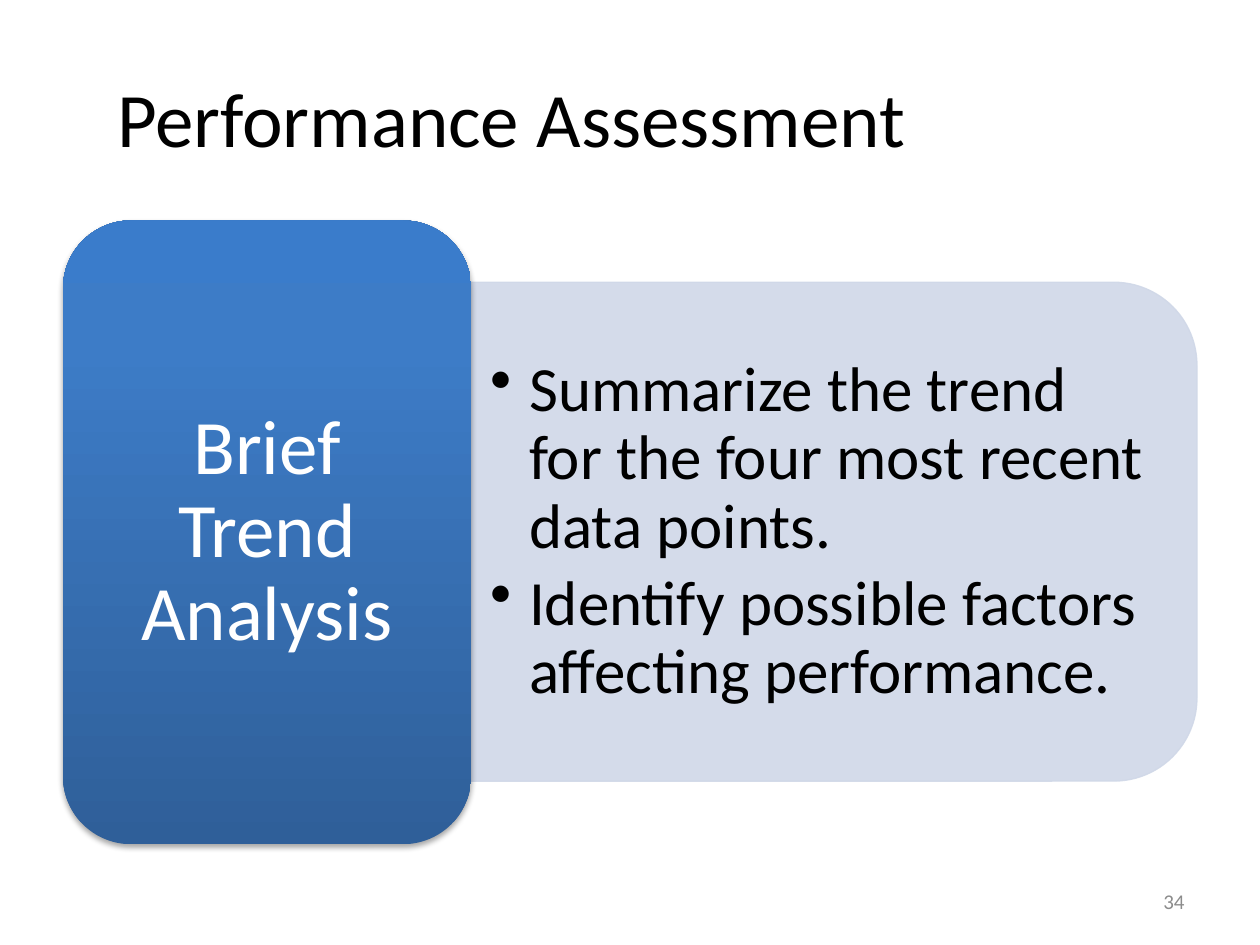
from dataclasses import dataclass

from pptx import Presentation
from pptx.dml.color import RGBColor
from pptx.enum.shapes import MSO_SHAPE
from pptx.enum.text import MSO_ANCHOR, PP_ALIGN
from pptx.oxml import parse_xml
from pptx.oxml.ns import nsdecls, qn
from pptx.util import Pt

PX = 9144  # 100 px to the inch
FONT = "Calibri"
LEFT, CENTER, RIGHT = PP_ALIGN.LEFT, PP_ALIGN.CENTER, PP_ALIGN.RIGHT
MIDDLE = MSO_ANCHOR.MIDDLE
COLORS = {
    "black": "000000",
    "white": "FFFFFF",
    "gray": "8C8C8C",
    "panel": "D0D8E8",
    "blue_dark": "2F5F99",
    "blue_mid": "3D7CC7",
    "blue_light": "3A7CCB",
}
GRADIENT = ((0, "blue_dark"), (80, "blue_mid"), (100, "blue_light"))


@dataclass
class Label:
    box: tuple[int, int, int, int]
    paragraphs: list[str]
    size: int
    color: str
    align: PP_ALIGN
    inset: tuple[int, int] = (10, 5)
    line_spacing: float = 1.0
    bullets: bool = False


LABELS = [
    Label((374, 244, 557, 357),
          ["Summarize the trend for the four most recent data points.",
           "Identify possible factors affecting performance."],
          36, "black", LEFT, (15, 7), 0.9, True),
    Label((66, 191, 292, 463), ["Brief Trend Analysis"],
          44, "white", CENTER, (18, 9), 0.9),
    Label((717, 695, 233, 40), ["34"], 12, "gray", RIGHT),
]


def emu(box: tuple[int, ...]) -> list[int]:
    return [v * PX for v in box]


def add_bullet(p) -> None:
    pPr = p._p.get_or_add_pPr()
    pPr.set("marL", str(31 * PX))
    pPr.set("indent", str(-31 * PX))
    pPr.append(parse_xml(f'<a:buChar {nsdecls("a")} char="•"/>'))


def fill_text(shape, label: Label) -> None:
    tf = shape.text_frame
    tf.word_wrap = True
    tf.vertical_anchor = MIDDLE
    tf.margin_left = tf.margin_right = label.inset[0] * PX
    tf.margin_top = tf.margin_bottom = label.inset[1] * PX
    tf.text = "\n".join(label.paragraphs)
    for p in tf.paragraphs:
        if label.bullets:
            add_bullet(p)
            p.space_after = Pt(5.4)
        p.alignment = label.align
        p.line_spacing = label.line_spacing
        for r in p.runs:
            r.font.name = FONT
            r.font.size = Pt(label.size)
            r.font.color.rgb = RGBColor.from_string(COLORS[label.color])


def add_panel(shapes) -> None:
    s = shapes.add_shape(MSO_SHAPE.ROUND_2_SAME_RECTANGLE,
                         *emu((464, 134, 396, 576)))
    s.rotation = 90
    s.shadow.inherit = False
    s.line.width = Pt(0.75)
    for fill in (s.fill, s.line.fill):
        fill.solid()
        fill.fore_color.rgb = RGBColor.from_string(COLORS["panel"])
    for color in s._element.spPr.iter(qn("a:srgbClr")):
        color.append(parse_xml(f'<a:alpha {nsdecls("a")} val="90000"/>'))


def add_heading_block(shapes) -> None:
    s = shapes.add_shape(MSO_SHAPE.ROUNDED_RECTANGLE,
                         *emu((50, 175, 324, 495)))
    s.line.fill.background()
    s.fill.gradient()
    s.fill.gradient_angle = 90
    spPr = s._element.spPr
    stops = spPr.find(qn("a:gradFill")).find(qn("a:gsLst"))
    stops.clear()
    for position, name in GRADIENT:
        stops.append(parse_xml(
            f'<a:gs {nsdecls("a")} pos="{position * 1000}">'
            f'<a:srgbClr val="{COLORS[name]}"/></a:gs>'))
    s.shadow.inherit = False
    spPr.find(qn("a:effectLst")).append(parse_xml(
        f'<a:outerShdw {nsdecls("a")} blurRad="{Pt(3.1)}" dist="{Pt(1.8)}" '
        f'dir="5400000" rotWithShape="0"><a:srgbClr val="{COLORS["black"]}">'
        '<a:alpha val="35000"/></a:srgbClr></a:outerShdw>'))


def main() -> None:
    prs = Presentation()
    prs.slide_width, prs.slide_height = emu((1000, 750))
    slide = prs.slides.add_slide(prs.slide_layouts[5])
    title = slide.shapes.title
    title.left, title.top, title.width, title.height = emu((83, 30, 867, 125))
    fill_text(title, Label((83, 30, 867, 125), ["Performance Assessment"],
                           44, "black", LEFT))
    add_panel(slide.shapes)
    add_heading_block(slide.shapes)
    for label in LABELS:
        fill_text(slide.shapes.add_textbox(*emu(label.box)), label)
    prs.save("out.pptx")


if __name__ == "__main__":
    main()
